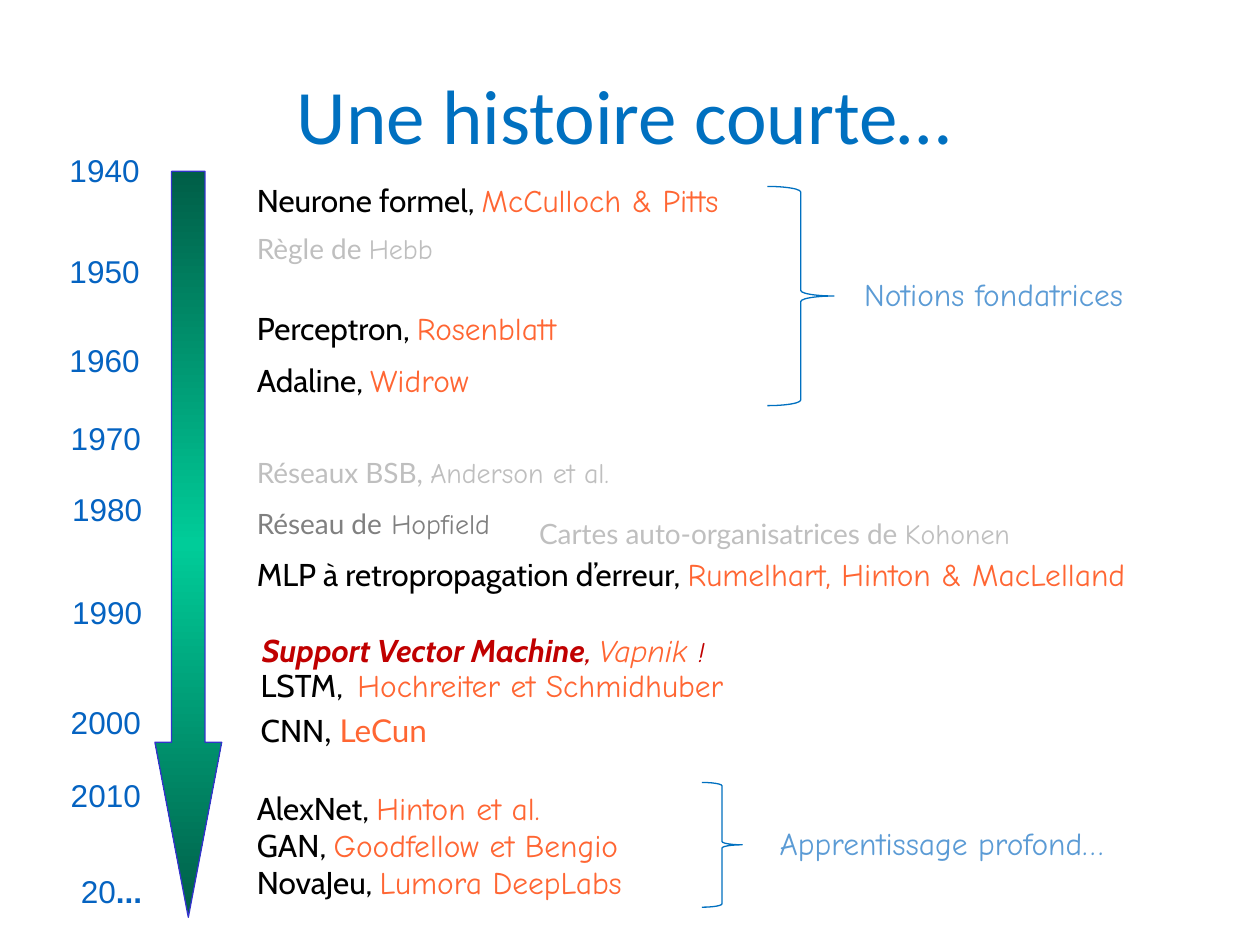
"""Build a timeline slide on the short history of neural networks."""
import copy
from typing import NamedTuple

import pptx
import pptx.dml.color
import pptx.enum.shapes
import pptx.enum.text
import pptx.oxml.ns
import pptx.util

COLUMNS, ROWS = 100, 75
SLIDE_WIDTH, SLIDE_HEIGHT = pptx.util.Inches(10), pptx.util.Inches(7.5)
SHAPES = pptx.enum.shapes.MSO_SHAPE
ALIGN = pptx.enum.text.PP_ALIGN


class Style(NamedTuple):
    font: str
    color: str
    size: int = 18
    bold: bool = False
    italic: bool = False


class Box(NamedTuple):
    column: float
    row: float
    width: float
    height: float


class Label(NamedTuple):
    column: float
    row: float
    width: float
    runs: list[tuple[str, Style]]


class Brace(NamedTuple):
    box: Box
    label: Label


TITLE = Style("Calibri", "0070C0", 44)
YEAR = Style("Arial", "0563C1")
TOPIC = Style("Cabin", "000000")
AUTHOR = Style("Comic Neue", "FF6633")
NOTION = Style("Comic Neue", "5B9BD5")
PALE_TOPIC = Style("Lato", "BFBFBF", 16)
PALE_AUTHOR = Style("Comic Neue", "BFBFBF", 16)
GREY_TOPIC = Style("Lato", "808080", 16)
GREY_AUTHOR = Style("Comic Neue", "808080", 16)
RED_TOPIC = Style("Cabin", "C00000", 18, True, True)

YEARS = [
    Label(column, row, 7.6, [(year, YEAR)])
    for year, column, row in [
        ("1940", 4.5, 11.5), ("1950", 4.5, 19.5), ("1960", 4.5, 26.6),
        ("1970", 4.6, 32.8), ("1980", 4.7, 38.4), ("1990", 4.7, 46.6),
        ("2000", 4.6, 55.3), ("2010", 4.6, 61.1),
    ]
] + [Label(5.4, 68.7, 6.9, [("20", YEAR), ("...", YEAR._replace(bold=True))])]

MILESTONES = [
    Label(19.4, 13.9, 41.5, [("Neurone formel, ", TOPIC), ("McCulloch & Pitts", AUTHOR)]),
    Label(19.4, 17.9, 16.9, [("Règle de ", PALE_TOPIC), ("Hebb", PALE_AUTHOR)]),
    Label(19.4, 24, 28.2, [("Perceptron, ", TOPIC), ("Rosenblatt", AUTHOR)]),
    Label(19.4, 28.2, 21.6, [("Adaline, ", TOPIC), ("Widrow", AUTHOR)]),
    Label(19.4, 35.7, 32.9, [("Réseaux BSB, ", PALE_TOPIC), ("Anderson et al.", PALE_AUTHOR)]),
    Label(19.4, 39.7, 22, [("Réseau de", GREY_TOPIC), (" Hopfield", GREY_AUTHOR)]),
    Label(41.8, 40.5, 40.2,
          [("Cartes auto-organisatrices de ", PALE_TOPIC), ("Kohonen", PALE_AUTHOR)]),
    Label(19.4, 43.6, 76.8,
          [("MLP à retropropagation d’erreur, ", TOPIC), ("Rumelhart, Hinton & MacLelland", AUTHOR)]),
    Label(19.8, 49.6, 40.4,
          [("Support Vector Machine", RED_TOPIC), (", ", RED_TOPIC._replace(bold=False)),
           ("Vapnik ", AUTHOR._replace(italic=True)),
           ("!", Style("Comic Neue", "C00000", 16, italic=True))]),
    Label(19.7, 52.4, 42.8, [("LSTM,  ", TOPIC), ("Hochreiter et Schmidhuber", AUTHOR)]),
    Label(19.7, 55.9, 15.8,
          [("CNN", TOPIC), (", ", TOPIC._replace(font="Lato")),
           ("LeCun", AUTHOR._replace(font="Lato"))]),
    Label(19.4, 62.1, 26.6, [("AlexNet, ", TOPIC), ("Hinton et al.", AUTHOR)]),
    Label(19.4, 65.1, 33.2, [("GAN, ", TOPIC), ("Goodfellow et Bengio", AUTHOR)]),
    Label(19.4, 68, 32.9,
          [("NovaJeu,", TOPIC), (" ", PALE_TOPIC), ("Lumora DeepLabs", AUTHOR)]),
]

BRACES = [
    Brace(Box(60.9, 14.8, 5.3, 17.4),
          Label(67.6, 21.3, 25.6, [("Notions fondatrices", NOTION)])),
    Brace(Box(55.7, 62.1, 3.2, 9.9),
          Label(60.9, 64.9, 30.6, [("Apprentissage profond…", NOTION)])),
]


def rgb(color: str) -> pptx.dml.color.RGBColor:
    """Turn a hex string into a colour."""
    return pptx.dml.color.RGBColor.from_string(color)


def place(box: Box) -> tuple[int, int, int, int]:
    """Convert grid columns and rows into slide lengths."""
    return (
        round(box.column * SLIDE_WIDTH / COLUMNS),
        round(box.row * SLIDE_HEIGHT / ROWS),
        round(box.width * SLIDE_WIDTH / COLUMNS),
        round(box.height * SLIDE_HEIGHT / ROWS),
    )


def format_run(run, style: Style) -> None:
    """Apply a style to one run."""
    run.font.name = style.font
    run.font.size = pptx.util.Pt(style.size)
    run.font.bold = style.bold
    run.font.italic = style.italic
    run.font.color.rgb = rgb(style.color)


def add_label(slide, label: Label, alignment=ALIGN.LEFT) -> None:
    """Draw one line of styled runs."""
    height = 4 if label.runs[0][1].size == 18 else 3.7
    shape = slide.shapes.add_textbox(*place(Box(label.column, label.row, label.width, height)))
    shape.text_frame.word_wrap = False
    shape.text_frame.auto_size = pptx.enum.text.MSO_AUTO_SIZE.SHAPE_TO_FIT_TEXT
    paragraph = shape.text_frame.paragraphs[0]
    paragraph.alignment = alignment
    for text, style in label.runs:
        run = paragraph.add_run()
        run.text = text
        format_run(run, style)


def add_outlined(slide, kind, box: Box, line_color: str):
    """Draw a preset shape with a thin outline and no shadow."""
    shape = slide.shapes.add_shape(kind, *place(box))
    shape.shadow.inherit = False
    shape.line.color.rgb = rgb(line_color)
    shape.line.width = pptx.util.Pt(0.75)
    return shape


def add_time_arrow(slide) -> None:
    """Draw the downward time arrow with its three-stop gradient."""
    arrow = add_outlined(slide, SHAPES.DOWN_ARROW, Box(12.3, 13.6, 5.3, 59.2), "3333CC")
    arrow.adjustments[0], arrow.adjustments[1] = 0.5, 2.62
    arrow.fill.gradient()
    arrow.fill.gradient_angle = 270
    stop_list = arrow.element.spPr.find(".//" + pptx.oxml.ns.qn("a:gsLst"))
    stop_list.insert(1, copy.deepcopy(stop_list[0]))
    for stop, position, color in zip(
        arrow.fill.gradient_stops, (0, 0.5, 1), ("005E47", "00CC99", "005E47")
    ):
        stop.position = position
        stop.color.rgb = rgb(color)


def add_brace(slide, brace: Brace) -> None:
    """Draw a right brace and the notion it gathers."""
    shape = add_outlined(slide, SHAPES.RIGHT_BRACE, brace.box, "0070C0")
    shape.fill.solid()
    shape.fill.fore_color.rgb = rgb("FFFFFF")
    add_label(slide, brace.label)


def add_title(slide, text: str) -> None:
    """Place and format the title placeholder."""
    title = slide.shapes.title
    title.left, title.top, title.width, title.height = place(Box(0, 4.4, 99.1, 9.2))
    title.text_frame.text = text
    title.text_frame.vertical_anchor = pptx.enum.text.MSO_ANCHOR.MIDDLE
    paragraph = title.text_frame.paragraphs[0]
    paragraph.alignment = ALIGN.CENTER
    format_run(paragraph.runs[0], TITLE)


def main() -> None:
    """Build and save the presentation."""
    presentation = pptx.Presentation()
    presentation.slide_width, presentation.slide_height = SLIDE_WIDTH, SLIDE_HEIGHT
    slide = presentation.slides.add_slide(presentation.slide_layouts[5])
    add_title(slide, "Une histoire courte…")
    add_time_arrow(slide)
    for year in YEARS:
        add_label(slide, year, ALIGN.CENTER)
    for milestone in MILESTONES:
        add_label(slide, milestone)
    for brace in BRACES:
        add_brace(slide, brace)
    presentation.save("out.pptx")


if __name__ == "__main__":
    main()
